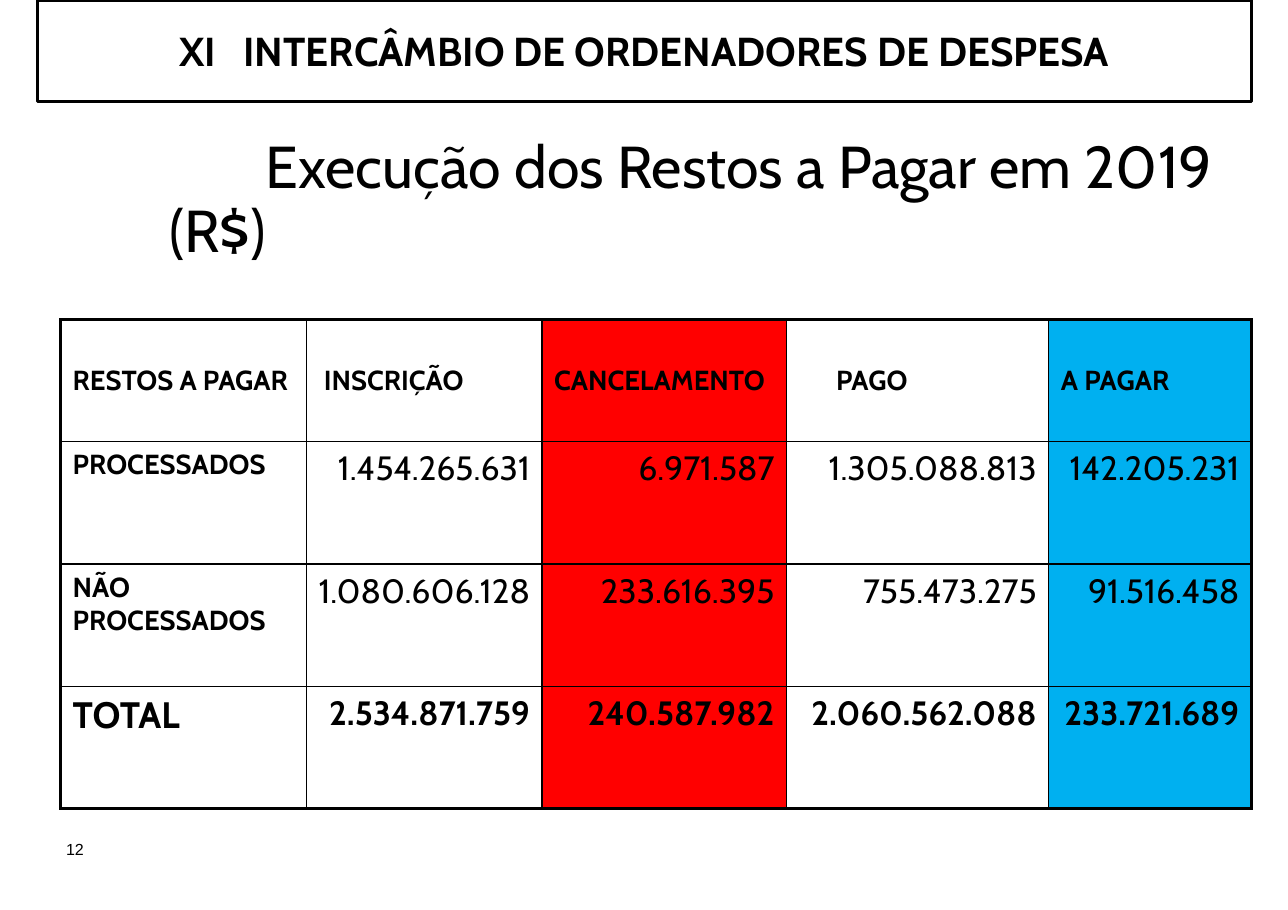
import lxml.etree
import pptx
import pptx.dml.color
import pptx.enum.shapes
import pptx.enum.text
import pptx.oxml.ns
import pptx.util

Inches = pptx.util.Inches
Pt = pptx.util.Pt
ALIGN = pptx.enum.text.PP_ALIGN
MIDDLE = pptx.enum.text.MSO_ANCHOR.MIDDLE
TOP = pptx.enum.text.MSO_ANCHOR.TOP

BLACK, WHITE, RED, BLUE = "000000", "FFFFFF", "FF0000", "00B0F0"
FONT = "Cabin"

COL_WIDTHS = [2.23, 2.14, 2.22, 2.38, 1.84]
COL_FILLS = [None, None, RED, None, BLUE]
HEADER_INDENTS = [0, 0.05, 0, 0.34, 0]
ROW_HEIGHT = 1.11
ROWS = [
    ["RESTOS A PAGAR", "INSCRIÇÃO", "CANCELAMENTO", "PAGO", "A PAGAR"],
    ["PROCESSADOS", "1.454.265.631", "6.971.587", "1.305.088.813", "142.205.231"],
    ["NÃO PROCESSADOS", "1.080.606.128", "233.616.395", "755.473.275", "91.516.458"],
    ["TOTAL", "2.534.871.759", "240.587.982", "2.060.562.088", "233.721.689"],
]


def rgb(color):
    return pptx.dml.color.RGBColor.from_string(color)


def format_paragraph(p, size, bold=False, align=ALIGN.LEFT, font=FONT):
    p.alignment = align
    for r in p.runs:
        r.font.name = font
        r.font.size = Pt(size)
        r.font.bold = bold
        r.font.color.rgb = rgb(BLACK)


def add_banner(s):
    sp = s.shapes.add_shape(pptx.enum.shapes.MSO_SHAPE.RECTANGLE,
                            Inches(0.34), 0, Inches(11.02), Inches(0.92))
    sp.shadow.inherit = False
    sp.fill.solid()
    sp.fill.fore_color.rgb = rgb(WHITE)
    sp.line.color.rgb = rgb(BLACK)
    sp.line.width = Pt(2)
    tf = sp.text_frame
    tf.word_wrap = False
    tf.vertical_anchor = MIDDLE
    p = tf.paragraphs[0]
    for text in ("XI", " ", "INTERCÂMBIO DE ORDENADORES DE DESPESA"):
        p.add_run().text = text
    format_paragraph(p, 26.4, True, ALIGN.CENTER)
    # Letter spacing widens the gap after the numeral
    p.runs[1].font._element.set("spc", "1200")


def set_title(s):
    sp = s.shapes.title
    sp.left, sp.top = Inches(1.44), Inches(1.18)
    sp.width, sp.height = Inches(9.7), Inches(1.3)
    tf = sp.text_frame
    tf.text = "Execução dos Restos a Pagar em 2019 (R$)"
    tf.word_wrap = True
    tf.auto_size = pptx.enum.text.MSO_AUTO_SIZE.NONE
    tf.vertical_anchor = MIDDLE
    p = tf.paragraphs[0]
    p.line_spacing = 0.9
    p._p.get_or_add_pPr().set("indent", str(Inches(0.87)))
    format_paragraph(p, 38.6)


def set_borders(cell, widths):
    """Draw black borders; widths maps L, R, T and B to points."""
    tc_pr = cell._tc.get_or_add_tcPr()
    for side, width in widths.items():
        ln = lxml.etree.SubElement(tc_pr, pptx.oxml.ns.qn(f"a:ln{side}"),
                                   w=str(Pt(width)))
        fill = lxml.etree.SubElement(ln, pptx.oxml.ns.qn("a:solidFill"))
        lxml.etree.SubElement(fill, pptx.oxml.ns.qn("a:srgbClr"), val=BLACK)


def format_cell(cell, text, row, col):
    last_row, last_col = len(ROWS) - 1, len(COL_WIDTHS) - 1
    is_header, is_label, is_total = row == 0, col == 0, row == last_row
    edges = {"L": col == 0, "R": col == last_col, "T": row == 0, "B": is_total}
    set_borders(cell, {side: 2.25 if outer else 1 for side, outer in edges.items()})
    if COL_FILLS[col]:
        cell.fill.solid()
        cell.fill.fore_color.rgb = rgb(COL_FILLS[col])
    else:
        cell.fill.background()
    indent = HEADER_INDENTS[col] if is_header else 0
    cell.margin_left = Inches(0.11 + indent)
    cell.margin_right = Inches(0.11)
    cell.margin_top = cell.margin_bottom = Inches(0.06)
    cell.vertical_anchor = MIDDLE if is_header else TOP
    cell.text_frame.text = text
    if is_header or is_label:
        size, align = 24 if is_total else 18, ALIGN.LEFT
    else:
        size, align = 22, ALIGN.RIGHT
    bold = is_header or is_label or is_total
    format_paragraph(cell.text_frame.paragraphs[0], size, bold, align)


def add_payments_table(s):
    table = s.shapes.add_table(
        len(ROWS), len(COL_WIDTHS), Inches(0.55), Inches(2.9),
        Inches(sum(COL_WIDTHS)), Inches(ROW_HEIGHT * len(ROWS))).table
    table.first_row = table.horz_banding = False
    for column, width in zip(table.columns, COL_WIDTHS):
        column.width = Inches(width)
    for i, values in enumerate(ROWS):
        table.rows[i].height = Inches(ROW_HEIGHT)
        for j, text in enumerate(values):
            format_cell(table.cell(i, j), text, i, j)


def add_page_number(s):
    sp = s.shapes.add_textbox(Inches(0.11), Inches(7.17), Inches(0.75), Inches(1.07))
    tf = sp.text_frame
    tf.word_wrap = True
    tf.vertical_anchor = MIDDLE
    tf.text = "12"
    format_paragraph(tf.paragraphs[0], 10.5, align=ALIGN.RIGHT, font="Arial")


def main():
    prs = pptx.Presentation()
    prs.slide_width, prs.slide_height = Inches(11.69), Inches(8.26)
    s = prs.slides.add_slide(prs.slide_layouts[5])
    set_title(s)
    add_page_number(s)
    add_payments_table(s)
    add_banner(s)
    prs.save("out.pptx")


if __name__ == "__main__":
    main()
